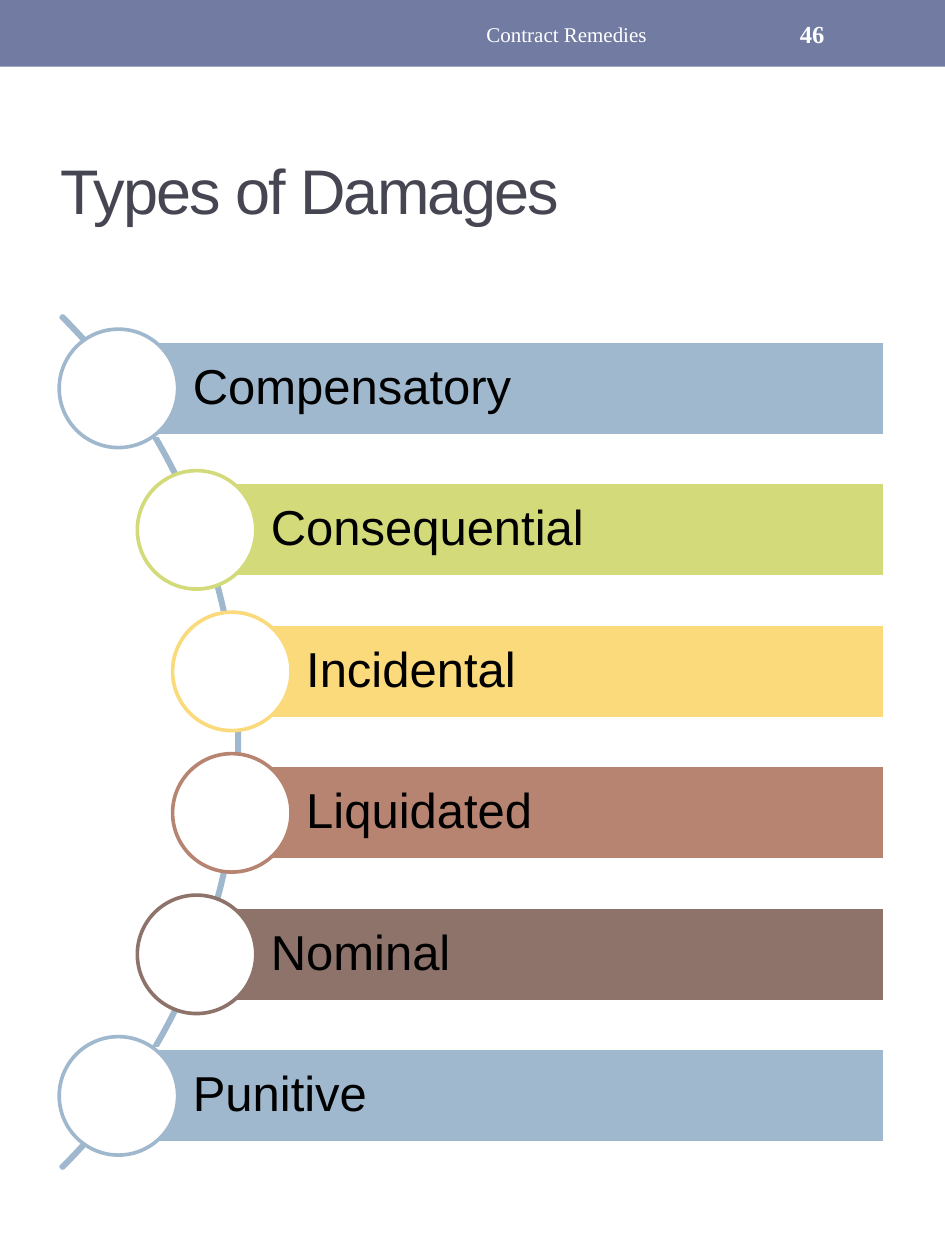
"""Build the Types of Damages slide: six labelled bars along an arc."""
import pptx
import pptx.util
import pptx.dml.color
import pptx.enum.shapes
import pptx.enum.text

W, H = 7.5, 10
TITLE = "Types of Damages"
HEADER = "Contract Remedies"
PAGE = "46"
DAMAGES = [
    ("Compensatory", "9FB8CD", 0.94),
    ("Consequential", "D2DA7A", 1.56),
    ("Incidental", "FADA7A", 1.84),
    ("Liquidated", "B88472", 1.84),
    ("Nominal", "8E736A", 1.56),
    ("Punitive", "9FB8CD", 0.94),
]
THEME = {
    "header": "727CA3", "title": "464653", "arc": "9FB8CD", "white": "FFFFFF", "black": "000000",
    "sans": "Arial", "serif": "Times New Roman",
    "title_pt": 36, "label_pt": 28, "header_pt": 12, "page_pt": 14, "line_pt": 2.08,
}
MID_Y, PITCH, BAR_H, BAR_RIGHT, CIRCLE = 5.89, 1.123, 0.75, 7.02, 0.94
ARC = 9.57
ARC_LEFT = -7.67

MSO = pptx.enum.shapes.MSO_SHAPE
ALIGN = pptx.enum.text.PP_ALIGN


def rgb(name):
    return pptx.dml.color.RGBColor.from_string(name)


def inches(*values):
    return [pptx.util.Inches(v) for v in values]


def add_shape(s, kind, box, fill=None, line=None):
    sp = s.shapes.add_shape(kind, *inches(*box))
    sp.shadow.inherit = False
    if fill:
        sp.fill.solid()
        sp.fill.fore_color.rgb = rgb(fill)
    else:
        sp.fill.background()
    if line:
        sp.line.color.rgb = rgb(line)
        sp.line.width = pptx.util.Pt(THEME["line_pt"])
    else:
        sp.line.fill.background()
    return sp


def write(sp, text, size, font, color, align=ALIGN.LEFT, bold=False, insets=(0.1, 0.05, 0.1, 0.05)):
    tf = sp.text_frame
    tf.word_wrap = True
    tf.vertical_anchor = pptx.enum.text.MSO_ANCHOR.MIDDLE
    tf.margin_left, tf.margin_top, tf.margin_right, tf.margin_bottom = inches(*insets)
    p = tf.paragraphs[0]
    p.alignment = align
    r = p.add_run()
    r.text = text
    r.font.size = pptx.util.Pt(THEME[size])
    r.font.name = THEME[font]
    r.font.bold = bold
    r.font.color.rgb = rgb(THEME[color])
    return p, r


def add_text(s, box, *args, **kwargs):
    return write(s.shapes.add_textbox(*inches(*box)), *args, **kwargs)


def add_damage(s, i, label, color, left):
    y = MID_Y + (i - (len(DAMAGES) - 1) / 2) * PITCH
    bar = add_shape(s, MSO.RECTANGLE, (left, y - BAR_H / 2, BAR_RIGHT - left, BAR_H), color, THEME["white"])
    p, r = write(bar, label, "label_pt", "sans", "black", insets=(0.59, 0.08, 0.08, 0.08))
    p.line_spacing = 0.9
    add_shape(s, MSO.OVAL, (left - CIRCLE / 2, y - CIRCLE / 2, CIRCLE, CIRCLE), THEME["white"], color)


def main():
    prs = pptx.Presentation()
    prs.slide_width, prs.slide_height = inches(W, H)
    s = prs.slides.add_slide(prs.slide_layouts[6])

    add_shape(s, MSO.RECTANGLE, (0, 0, W, 0.53), THEME["header"])
    p, r = add_text(s, (0.38, 0.78, 0.9 * W, 1.44), TITLE, "title_pt", "sans", "title")
    r.font._element.set("spc", "-100")

    arc = add_shape(s, MSO.BLOCK_ARC, (ARC_LEFT, MID_Y - ARC / 2, ARC, ARC), line=THEME["arc"])
    for i, value in enumerate((189, 27, 0.002)):
        arc.adjustments[i] = value
    for i, damage in enumerate(DAMAGES):
        add_damage(s, i, *damage)

    add_text(s, (2.81, 0.03, 0.45 * W, 0.48), HEADER, "header_pt", "serif", "white", ALIGN.CENTER)
    add_text(s, (6.25, 0.03, 0.88, 0.48), PAGE, "page_pt", "serif", "white", bold=True)
    prs.save("out.pptx")


if __name__ == "__main__":
    main()
